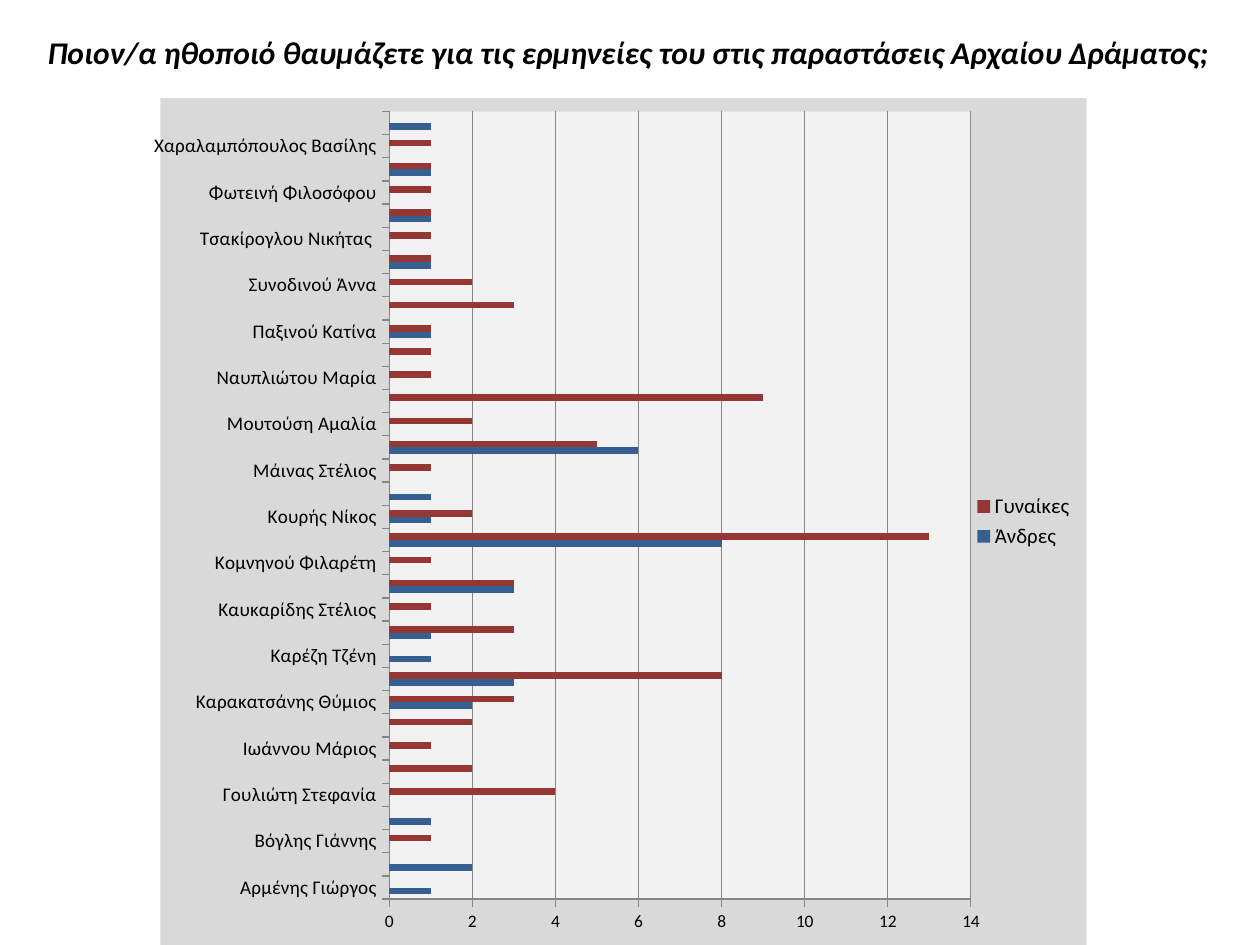
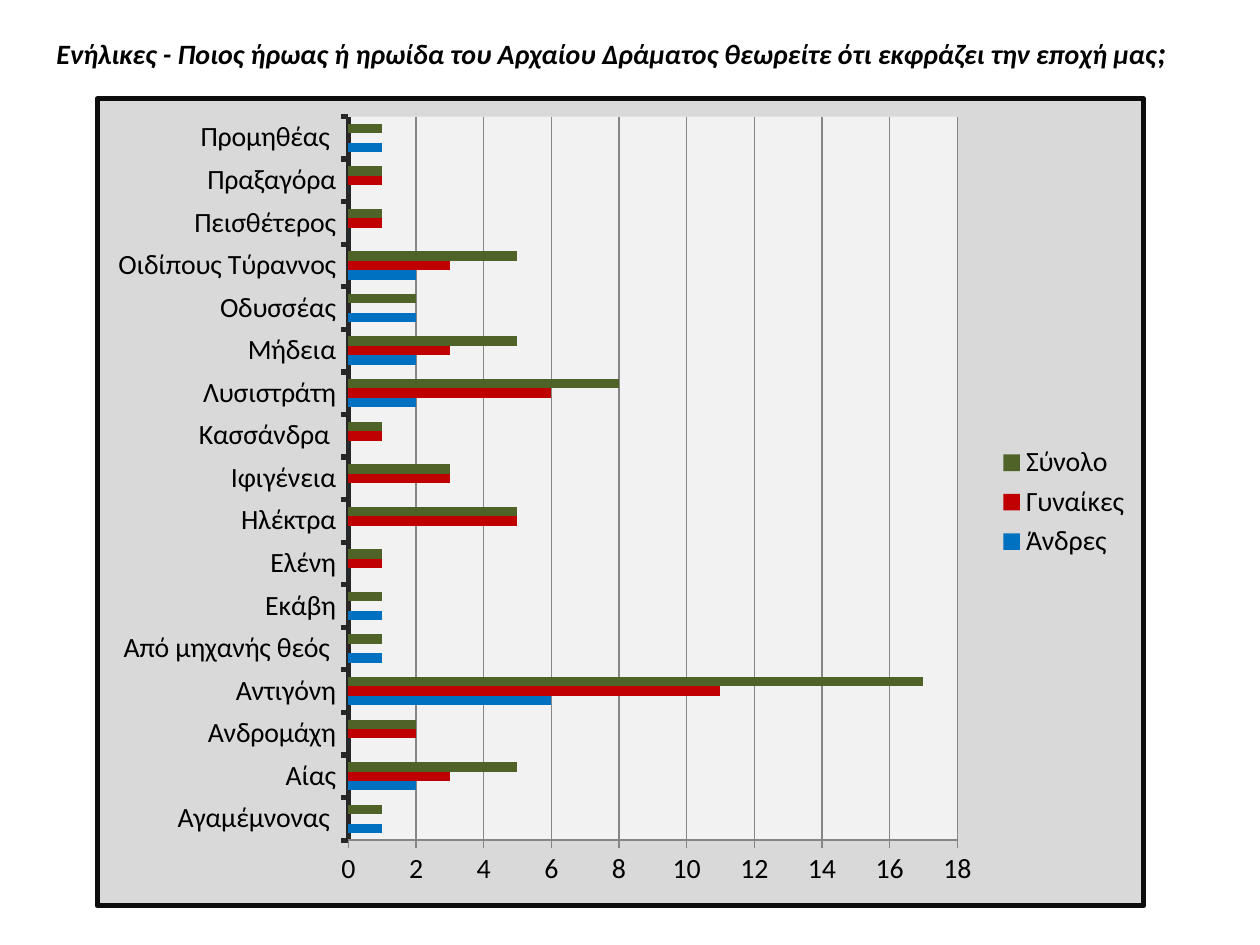
from lxml import etree
from pptx import Presentation
from pptx import util as u
from pptx.chart import data as cd
from pptx.dml import color
from pptx.enum import chart as ce
from pptx.enum import text
from pptx.oxml import ns

FONT = "Calibri"
COLORS = {
    "ink": "000000", "panel": "D9D9D9", "plot": "F2F2F2", "grid": "868686",
    "axis": "262626", "frame": "0D0D0D", "navy": "376092", "brick": "953735",
    "blue": "0070C0", "red": "C00000", "olive": "4F6228",
}

ACTORS = [
    ("Αρμένης Γιώργος", 1, 0), ("Βέγγος Θανάσης", 2, 0),
    ("Βόγλης Γιάννης", 0, 1), ("Βόκοβιτς Στέλιος", 1, 0),
    ("Γουλιώτη Στεφανία", 0, 4), ("Δημητρίου Κώστας", 0, 2),
    ("Ιωάννου Μάριος", 0, 1), ("Καραθάνος Νίκος", 0, 2),
    ("Καρακατσάνης Θύμιος", 2, 3), ("Καραμπέτη Καριοφυλιά ", 3, 8),
    ("Καρέζη Τζένη", 1, 0), ("Κατράκης Μάνος", 1, 3),
    ("Καυκαρίδης Στέλιος", 0, 1), ("Κιμούλης  Γιώργος", 3, 3),
    ("Κομνηνού Φιλαρέτη", 0, 1), ("Κονιόρδου Λυδία", 8, 13),
    ("Κουρής Νίκος", 1, 2), ("Κοτοπούλη Μαρίκα", 1, 0),
    ("Μάινας Στέλιος", 0, 1), ("Μαρκουλάκης Κων.", 6, 5),
    ("Μουτούση Αμαλία", 0, 2), ("Μπεμπεδέλη Δέσποινα", 0, 9),
    ("Ναυπλιώτου Μαρία", 0, 1), ("Νεοκλέους Νεοκλής", 0, 1),
    ("Παξινού Κατίνα", 1, 1), ("Σαντοριναίου Αννίτα ", 0, 3),
    ("Συνοδινού Άννα", 0, 2), ("Στάνκογλου Γιάννης", 1, 1),
    ("Τσακίρογλου Νικήτας ", 0, 1), ("Φιλιππίδης Πέτρος ", 1, 1),
    ("Φωτεινή Φιλοσόφου", 0, 1), ("Φυρογένη Στέλλα", 1, 1),
    ("Χαραλαμπόπουλος Βασίλης", 0, 1), ("Χιλλ Σοφία", 1, 0),
]

HEROES = [
    ("Αγαμέμνονας ", 1, 0), ("Αίας", 2, 3), ("Ανδρομάχη", 0, 2),
    ("Αντιγόνη", 6, 11), ("Από μηχανής θεός ", 1, 0), ("Εκάβη", 1, 0),
    ("Ελένη", 0, 1), ("Ηλέκτρα", 0, 5), ("Ιφιγένεια", 0, 3),
    ("Κασσάνδρα ", 0, 1), ("Λυσιστράτη", 2, 6), ("Μήδεια", 2, 3),
    ("Οδυσσέας", 2, 0), ("Οιδίπους Τύραννος", 2, 3),
    ("Πεισθέτερος", 0, 1), ("Πραξαγόρα", 0, 1), ("Προμηθέας ", 1, 0),
]


def rgb(name):
    return color.RGBColor.from_string(COLORS[name])


def set_font(font, size, bold=False, italic=False):
    font.name, font.size = FONT, u.Pt(size)
    font.bold, font.italic = bold, italic
    font.color.rgb = rgb("ink")


def add_run(p, words, size, **fmt):
    r = p.add_run()
    r.text = words
    set_font(r.font, size, **fmt)


def add_title(s, left, runs):
    sp = s.shapes.title
    sp.left, sp.top = u.Pt(left), u.Pt(15)
    sp.width, sp.height = u.Pt(720 - left), u.Pt(30)
    tf = sp.text_frame
    tf.word_wrap = True
    tf.auto_size = text.MSO_AUTO_SIZE.NONE
    tf.vertical_anchor = text.MSO_ANCHOR.TOP
    p = tf.paragraphs[0]
    p.alignment = text.PP_ALIGN.LEFT
    for words, size in runs:
        add_run(p, words, size, bold=True, italic=True)


def area_format(fill, border=None):
    sp_pr = etree.Element(ns.qn("c:spPr"))

    def solid(parent, name):
        paint = etree.SubElement(parent, ns.qn("a:solidFill"))
        etree.SubElement(paint, ns.qn("a:srgbClr"), val=COLORS[name])

    solid(sp_pr, fill)
    ln = etree.SubElement(sp_pr, ns.qn("a:ln"))
    if border:
        ln.set("w", str(u.Pt(3)))
        solid(ln, border)
    else:
        etree.SubElement(ln, ns.qn("a:noFill"))
    return sp_pr


def place_plot(plot_area, box):
    for old in plot_area.findall(ns.qn("c:layout")):
        plot_area.remove(old)
    layout = etree.Element(ns.qn("c:layout"))
    manual = etree.SubElement(layout, ns.qn("c:manualLayout"))
    tags = ["layoutTarget", "xMode", "yMode", "x", "y", "w", "h"]
    for tag, val in zip(tags, ["inner", "edge", "edge", *box]):
        etree.SubElement(manual, ns.qn("c:" + tag), val=str(val))
    plot_area.insert(0, layout)


def format_axis(axis, size, line="grid", width=0.75):
    axis.major_tick_mark = ce.XL_TICK_MARK.OUTSIDE
    axis.minor_tick_mark = ce.XL_TICK_MARK.NONE
    set_font(axis.tick_labels.font, size)
    axis.format.line.color.rgb = rgb(line)
    axis.format.line.width = u.Pt(width)


def add_bars(s, frame, cats, series, plot_box, top_value, cat_size, val_size,
             legend_size, axis_line=("grid", 0.75), border=None):
    data = cd.CategoryChartData()
    data.categories = cats
    for name, vals, _ in series:
        data.add_series(name, vals)
    ch = s.shapes.add_chart(ce.XL_CHART_TYPE.BAR_CLUSTERED,
                            *map(u.Pt, frame), data).chart
    ch.has_title = False
    set_font(ch.font, 10)
    plot = ch.plots[0]
    plot.gap_width, plot.overlap = 150, 0
    plot.vary_by_categories = False
    for ser, (_, _, fill) in zip(plot.series, series):
        ser.format.fill.solid()
        ser.format.fill.fore_color.rgb = rgb(fill)

    format_axis(ch.category_axis, cat_size, *axis_line)
    ch.category_axis.has_major_gridlines = False
    values = ch.value_axis
    format_axis(values, val_size)
    values.minimum_scale, values.maximum_scale = 0, top_value
    values.major_unit = 2
    values.has_major_gridlines = True
    values.major_gridlines.format.line.color.rgb = rgb("grid")
    values.major_gridlines.format.line.width = u.Pt(0.75)

    ch.has_legend = True
    ch.legend.position = ce.XL_LEGEND_POSITION.RIGHT
    ch.legend.include_in_layout = False
    set_font(ch.legend.font, legend_size)

    chart_el = ch._chartSpace.find(ns.qn("c:chart"))
    chart_el.addnext(area_format("panel", border))
    plot_area = chart_el.find(ns.qn("c:plotArea"))
    plot_area.append(area_format("plot"))
    place_plot(plot_area, plot_box)


def main():
    prs = Presentation()
    prs.slide_width, prs.slide_height = u.Pt(720), u.Pt(540)
    title_only = prs.slide_layouts[5]

    s = prs.slides.add_slide(title_only)
    names, men, women = zip(*ACTORS)
    add_bars(s, (88, 56, 533, 484), names,
             [("Άνδρες", men, "navy"), ("Γυναίκες", women, "brick")],
             plot_box=(0.247, 0.016, 0.628, 0.93), top_value=14,
             cat_size=11, val_size=10, legend_size=12)
    add_title(s, 20, [("Ποιον/α ηθοποιό θαυμάζετε για τις ερμηνείες του "
                       "στις παραστάσεις Αρχαίου Δράματος;", 18)])

    s = prs.slides.add_slide(title_only)
    names, men, women = zip(*HEROES)
    total = [m + w for m, w in zip(men, women)]
    add_bars(s, (54, 55, 601, 464), names,
             [("Άνδρες", men, "blue"), ("Γυναίκες", women, "red"),
              ("Σύνολο", total, "olive")],
             plot_box=(0.24, 0.022, 0.582, 0.897), top_value=18,
             cat_size=16, val_size=16, legend_size=16,
             axis_line=("axis", 3), border="frame")
    add_title(s, 25, [("Ενήλικες - Ποιος ήρωας ή ηρωίδα του Αρχαίου Δράματος "
                       "θεωρείτε ότι εκφράζει την εποχή μας", 16), (";", 18)])

    prs.save("out.pptx")


if __name__ == "__main__":
    main()
